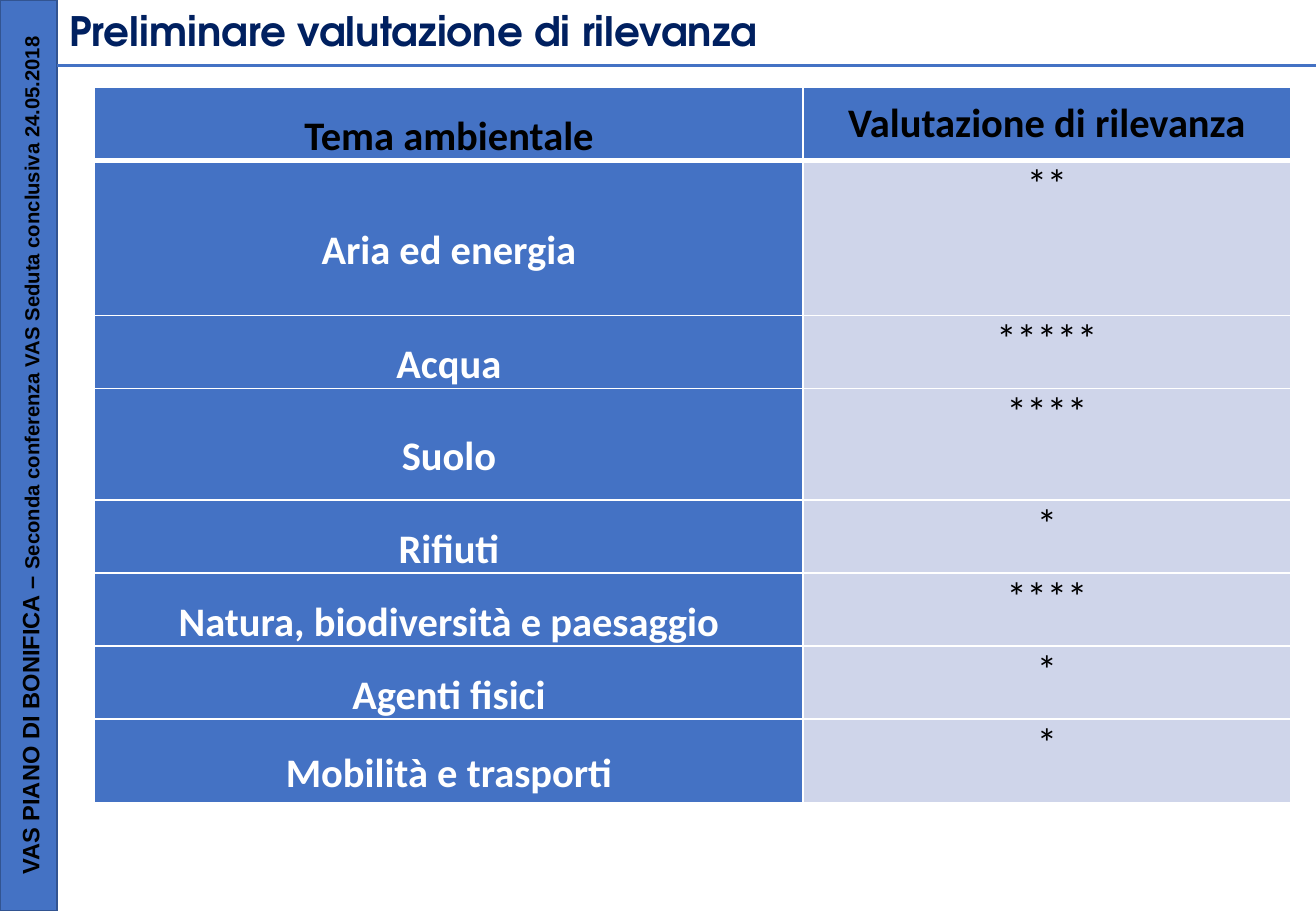
"""Build the slide that rates the relevance of each environmental theme."""
from lxml.etree import SubElement
from pptx import Presentation
from pptx.dml.color import RGBColor
from pptx.enum.shapes import MSO_CONNECTOR, MSO_SHAPE
from pptx.enum.text import MSO_ANCHOR, MSO_AUTO_SIZE, PP_ALIGN
from pptx.oxml import parse_xml
from pptx.oxml.ns import nsdecls, qn
from pptx.util import Cm, Pt

BLUE = RGBColor(0x44, 0x72, 0xC4)
DARK_BLUE = RGBColor(0x32, 0x54, 0x91)
NAVY = RGBColor(0x00, 0x20, 0x60)
PALE = RGBColor(0xCF, 0xD5, 0xEA)
BLACK = RGBColor(0, 0, 0)
WHITE = RGBColor(0xFF, 0xFF, 0xFF)

ROWS = [
    ("Tema ambientale", "Valutazione di rilevanza", 1.52),
    ("Aria ed energia", "**", 3.24),
    ("Acqua", "*****", 1.52),
    ("Suolo", "****", 2.34),
    ("Rifiuti", "*", 1.52),
    ("Natura, biodiversità e paesaggio", "****", 1.52),
    ("Agenti fisici", "*", 1.52),
    ("Mobilità e trasporti", "*", 1.76),
]


def style_font(font, name, size, color, bold=True):
    font.name = name
    font.size = Pt(size)
    font.bold = bold
    font.color.rgb = color


def add_border(cell, side, width):
    cell._tc.get_or_add_tcPr().append(parse_xml(
        f'<a:{side} {nsdecls("a")} w="{Pt(width)}"><a:solidFill>'
        f'<a:srgbClr val="{WHITE}"/></a:solidFill></a:{side}>'))


prs = Presentation()
prs.slide_width, prs.slide_height = Cm(27.51), Cm(19.05)
s = prs.slides.add_slide(prs.slide_layouts[5])

title = s.shapes.title
title.left, title.top, title.width, title.height = Cm(1.19), Cm(0), Cm(26.19), Cm(1.27)
tf = title.text_frame
tf.text = "Preliminare valutazione di rilevanza"
tf.auto_size = MSO_AUTO_SIZE.NONE
tf.vertical_anchor = MSO_ANCHOR.TOP
p = tf.paragraphs[0]
p.alignment = PP_ALIGN.LEFT
style_font(p.runs[0].font, "TeX Gyre Adventor", 24, NAVY)

bar = s.shapes.add_shape(MSO_SHAPE.RECTANGLE, Cm(0), Cm(0), Cm(1.19), Cm(19.05))
bar.shadow.inherit = False
bar.fill.solid()
bar.fill.fore_color.rgb = BLUE
bar.line.color.rgb = DARK_BLUE
bar.line.width = Pt(1)

rule = s.shapes.add_connector(MSO_CONNECTOR.STRAIGHT, Cm(1.19), Cm(1.37), Cm(27.51), Cm(1.37))
rule.line.color.rgb = BLUE
rule.line.width = Pt(2.25)
SubElement(rule._element.spPr, qn("a:effectLst"))

side_label = s.shapes.add_textbox(Cm(-8.89), Cm(9.1), Cm(19.05), Cm(0.86))
side_label.rotation = 270
tf = side_label.text_frame
tf.word_wrap = True
p = tf.paragraphs[0]
p.alignment = PP_ALIGN.CENTER
for text, size in [("VAS PIANO DI BONIFICA – ", 14),
                   ("Seconda conferenza VAS Seduta conclusiva 24.05.2018", 12)]:
    r = p.add_run()
    r.text = text
    style_font(r.font, "Arial", size, BLACK)

height = sum(row[2] for row in ROWS)
table = s.shapes.add_table(len(ROWS), 2, Cm(1.98), Cm(1.83), Cm(25), Cm(height)).table
table.columns[0].width, table.columns[1].width = Cm(14.81), Cm(10.19)

for i, (theme, rating, row_height) in enumerate(ROWS):
    table.rows[i].height = Cm(row_height)
    for j, text in enumerate((theme, rating)):
        is_header, is_theme = i == 0, j == 0
        cell = table.cell(i, j)
        cell.margin_left = cell.margin_right = Cm(0.13)
        cell.margin_top = cell.margin_bottom = Cm(0)
        cell.vertical_anchor = MSO_ANCHOR.MIDDLE if is_header or is_theme else MSO_ANCHOR.TOP
        for side, width in [("lnL", 1), ("lnR", 1), ("lnT", 3 if i == 1 else 1),
                            ("lnB", 3 if is_header else 1)]:
            add_border(cell, side, width)
        cell.fill.solid()
        cell.fill.fore_color.rgb = BLUE if is_header or is_theme else PALE
        cell.text_frame.text = text
        p = cell.text_frame.paragraphs[0]
        p.alignment = PP_ALIGN.CENTER
        if is_theme:
            p.line_spacing = 1.5
        color = WHITE if is_theme and not is_header else BLACK
        style_font(p.runs[0].font, "Calibri", 24, color, is_header or is_theme)

prs.save("out.pptx")
